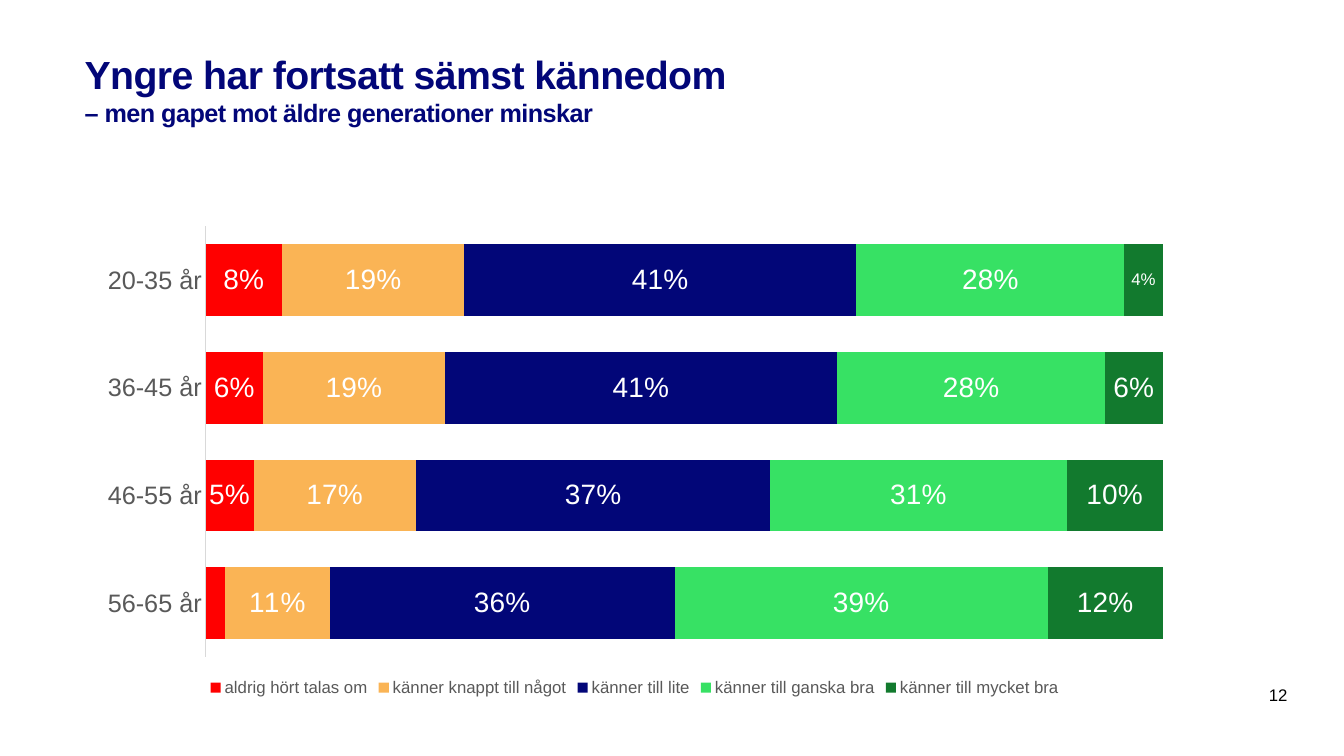
"""Build a slide with a stacked bar chart of awareness by age group."""
import pptx
import pptx.chart.data
import pptx.dml.color
import pptx.enum.chart
import pptx.enum.text
import pptx.oxml
import pptx.oxml.ns
import pptx.util

FONT = "Arial"
COLORS = {
    "navy": "020678", "red": "FF0000", "orange": "FAB455", "light_green": "37E164",
    "dark_green": "127A2E", "gray": "595959", "axis": "D9D9D9", "white": "FFFFFF",
    "black": "000000",
}
TITLE_LINES = [
    ("Yngre har fortsatt sämst kännedom", 28),
    ("– men gapet mot äldre generationer minskar", 18),
]
SLIDE_NUMBER = "12"
AGE_GROUPS = ["56-65 år", "46-55 år", "36-45 år", "20-35 år"]
SERIES = [
    ("aldrig hört talas om", "red", (0.02, 0.05, 0.06, 0.08)),
    ("känner knappt till något", "orange", (0.11, 0.17, 0.19, 0.19)),
    ("känner till lite", "navy", (0.36, 0.37, 0.41, 0.41)),
    ("känner till ganska bra", "light_green", (0.39, 0.31, 0.28, 0.28)),
    ("känner till mycket bra", "dark_green", (0.12, 0.1, 0.06, 0.04)),
]
HIDDEN_LABEL = (0, 0)
SMALL_LABEL = (4, 3)
WIDTH, HEIGHT = 13.33, 7.5
LEFT = 0.84
TITLE_BOX = (LEFT, 0.46, 10.92, 1.12)
CHART_BOX = (LEFT, 2.15, 10.91, 4.8)
NUMBER_BOX = (12.02, 6.79, 0.75, 0.2)
PLOT_SHARES = {"x": 0.11, "y": 0.02, "w": 0.87, "h": 0.89}


def inches(box):
    return [pptx.util.Inches(length) for length in box]


def rgb(name):
    return pptx.dml.color.RGBColor.from_string(COLORS[name])


def set_font(font, size, color, bold=False):
    font.name, font.size, font.bold = FONT, pptx.util.Pt(size), bold
    font.color.rgb = rgb(color)


def add_text(slide, box, lines, color="black", bold=False, align="LEFT",
             anchor="TOP", spacing=0, inset_top=0):
    shape = slide.shapes.add_textbox(*inches(box))
    frame = shape.text_frame
    frame.word_wrap = True
    frame.margin_left = frame.margin_right = frame.margin_bottom = 0
    frame.margin_top = pptx.util.Inches(inset_top)
    frame.vertical_anchor = getattr(pptx.enum.text.MSO_ANCHOR, anchor)
    for index, (text, size) in enumerate(lines):
        paragraph = frame.add_paragraph() if index else frame.paragraphs[0]
        paragraph.alignment = getattr(pptx.enum.text.PP_ALIGN, align)
        run = paragraph.add_run()
        run.text = text
        set_font(run.font, size, color, bold)
        if spacing:
            run.font._element.set("spc", str(round(spacing * 100)))


def set_plot_layout(chart):
    plot_area = chart._chartSpace.chart.plotArea
    for old_layout in plot_area.findall(pptx.oxml.ns.qn("c:layout")):
        plot_area.remove(old_layout)
    modes = '<c:layoutTarget val="inner"/><c:xMode val="edge"/><c:yMode val="edge"/>'
    shares = "".join(f'<c:{key} val="{value}"/>' for key, value in PLOT_SHARES.items())
    plot_area.insert(0, pptx.oxml.parse_xml(
        f'<c:layout {pptx.oxml.ns.nsdecls("c")}><c:manualLayout>'
        f'{modes}{shares}</c:manualLayout></c:layout>'))


def style_axes(chart):
    category_axis, value_axis = chart.category_axis, chart.value_axis
    category_axis.major_tick_mark = pptx.enum.chart.XL_TICK_MARK.NONE
    set_font(category_axis.tick_labels.font, 18, "gray")
    category_axis.format.line.color.rgb = rgb("axis")
    category_axis.format.line.width = pptx.util.Pt(0.75)
    value_axis.visible = False
    value_axis.has_major_gridlines = False
    value_axis.minimum_scale, value_axis.maximum_scale = 0, 1


def style_series(series, color):
    series.format.fill.solid()
    series.format.fill.fore_color.rgb = rgb(color)
    labels = series.data_labels
    labels.show_value = True
    labels.number_format, labels.number_format_is_linked = "0%", False
    labels.position = pptx.enum.chart.XL_LABEL_POSITION.CENTER
    set_font(labels.font, 20, "white")


def add_awareness_chart(slide):
    data = pptx.chart.data.CategoryChartData(number_format="0%")
    data.categories = AGE_GROUPS
    for name, _, values in SERIES:
        data.add_series(name, values)
    chart = slide.shapes.add_chart(
        pptx.enum.chart.XL_CHART_TYPE.BAR_STACKED_100, *inches(CHART_BOX), data).chart
    set_font(chart.font, 10, "black")
    chart.has_title = False
    chart.has_legend = True
    chart.legend.position = pptx.enum.chart.XL_LEGEND_POSITION.BOTTOM
    chart.legend.include_in_layout = False
    set_font(chart.legend.font, 12, "gray")
    style_axes(chart)
    plot = chart.plots[0]
    plot.gap_width, plot.overlap, plot.vary_by_categories = 50, 100, False
    for series, (_, color, _) in zip(plot.series, SERIES):
        style_series(series, color)

    series_index, point_index = HIDDEN_LABEL
    plot.series[series_index].data_labels._element.insert(0, pptx.oxml.parse_xml(
        f'<c:dLbl {pptx.oxml.ns.nsdecls("c")}><c:idx val="{point_index}"/>'
        '<c:delete val="1"/></c:dLbl>'))
    series_index, point_index = SMALL_LABEL
    small_label = plot.series[series_index].points[point_index].data_label
    set_font(small_label.font, 12, "white")
    small_label.position = pptx.enum.chart.XL_LABEL_POSITION.CENTER
    set_plot_layout(chart)


def main():
    presentation = pptx.Presentation()
    presentation.slide_width, presentation.slide_height = inches((WIDTH, HEIGHT))
    slide = presentation.slides.add_slide(presentation.slide_layouts[6])
    add_awareness_chart(slide)
    add_text(slide, NUMBER_BOX, [(SLIDE_NUMBER, 12)], align="RIGHT", anchor="BOTTOM")
    add_text(slide, TITLE_BOX, TITLE_LINES, color="navy", bold=True, spacing=-0.4,
             inset_top=0.04)
    presentation.save("out.pptx")


if __name__ == "__main__":
    main()
